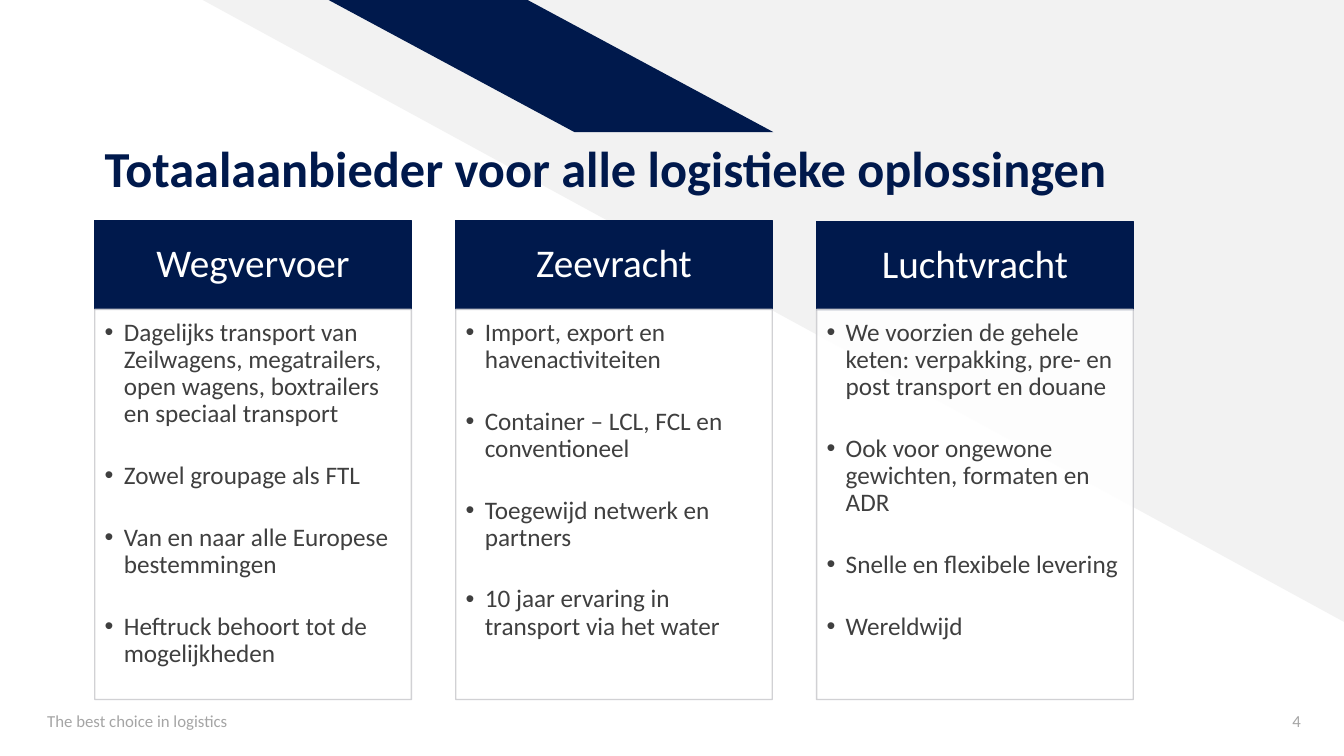
from dataclasses import dataclass

from lxml.etree import SubElement
from pptx import Presentation
from pptx.dml.color import RGBColor
from pptx.enum.shapes import MSO_SHAPE as Shape
from pptx.enum.text import MSO_ANCHOR as Anchor, PP_ALIGN as Align
from pptx.oxml.ns import qn
from pptx.util import Inches, Pt


@dataclass(frozen=True)
class Theme:
    font: str = "Calibri"
    navy: str = "00194C"
    pale: str = "F2F2F2"
    white: str = "FFFFFF"
    border: str = "CCCCD0"
    body: str = "3F3F3F"
    muted: str = "A5A5A5"
    title_size: int = 36
    heading_size: int = 28
    body_size: int = 18
    footer_size: int = 12


class SlideBuilder:
    def __init__(self, slide, theme):
        self.slide = slide
        self.theme = theme

    def shape(self, preset, box, fill, line=None, opacity=100, flips=()):
        shape = self.slide.shapes.add_shape(preset, *map(Inches, box))
        shape.shadow.inherit = False
        shape.fill.solid()
        shape.fill.fore_color.rgb = RGBColor.from_string(fill)
        if line:
            shape.line.color.rgb = RGBColor.from_string(line)
            shape.line.width = Pt(1)
        else:
            shape.line.fill.background()
        if opacity < 100:
            for color in shape.element.spPr.iter(qn("a:srgbClr")):
                SubElement(color, qn("a:alpha"), val=str(opacity * 1000))
        for flip in flips:
            shape.element.spPr.xfrm.set(flip, "1")
        return shape

    def text_box(self, box, text, size, color, **style):
        text_box = self.slide.shapes.add_textbox(*map(Inches, box))
        self.fill_text(text_box, [text], size, color, **style)

    def fill_text(self, shape, texts, size, color, bold=False,
                  align=Align.LEFT, anchor=Anchor.MIDDLE,
                  insets=(0.1, 0.05, 0.1, 0.05),
                  spacing=1.0, gap=0, bullets=False):
        frame = shape.text_frame
        frame.word_wrap = True
        frame.vertical_anchor = anchor
        (frame.margin_left, frame.margin_top,
         frame.margin_right, frame.margin_bottom) = map(Inches, insets)
        for index, text in enumerate(texts):
            paragraph = frame.add_paragraph() if index else frame.paragraphs[0]
            paragraph.alignment = align
            paragraph.line_spacing = spacing
            if index:
                paragraph.space_before = Pt(gap)
            if bullets:
                self.bullet(paragraph)
            run = paragraph.add_run()
            run.text = text
            run.font.name = self.theme.font
            run.font.size = Pt(size)
            run.font.bold = bold
            run.font.color.rgb = RGBColor.from_string(color)

    def bullet(self, paragraph):
        properties = paragraph._p.get_or_add_pPr()
        indent = Inches(0.19)
        properties.set("marL", str(indent))
        properties.set("indent", str(-indent))
        SubElement(properties, qn("a:buFont"), typeface="Arial")
        SubElement(properties, qn("a:buChar"), char="•")

    def service_column(self, left, heading_top, heading, points):
        theme = self.theme
        width, body_top = 3.14, 3.07
        header = self.shape(Shape.RECTANGLE, (left, heading_top, width, 0.88),
                            theme.navy, theme.navy)
        self.fill_text(header, [heading], theme.heading_size, theme.white,
                       align=Align.CENTER, spacing=0.9,
                       insets=(0.22, 0.12, 0.22, 0.12))
        panel = self.shape(Shape.RECTANGLE, (left, body_top, width, 3.87),
                           theme.white, theme.border, opacity=90)
        self.fill_text(panel, points, theme.body_size, theme.body,
                       anchor=Anchor.TOP, spacing=0.9, gap=24.6, bullets=True,
                       insets=(0.1, 0.1, 0.14, 0.16))


SERVICES = [
    (2.19, "Wegvervoer", [
        "Dagelijks transport van Zeilwagens, megatrailers, open wagens, "
        "boxtrailers en speciaal transport",
        "Zowel groupage als FTL",
        "Van en naar alle Europese bestemmingen",
        "Heftruck behoort tot de mogelijkheden",
    ]),
    (2.19, "Zeevracht", [
        "Import, export en havenactiviteiten",
        "Container – LCL, FCL en conventioneel",
        "Toegewijd netwerk en partners",
        "10 jaar ervaring in transport via het water",
    ]),
    (2.2, "Luchtvracht", [
        "We voorzien de gehele keten: verpakking, pre- en post transport "
        "en douane",
        "Ook voor ongewone gewichten, formaten en ADR",
        "Snelle en flexibele levering",
        "Wereldwijd",
    ]),
]


def main():
    deck = Presentation()
    deck.slide_width, deck.slide_height = Inches(13.33), Inches(7.5)
    theme = Theme()
    builder = SlideBuilder(deck.slides.add_slide(deck.slide_layouts[6]), theme)

    builder.shape(Shape.RIGHT_TRIANGLE, (2.01, 0, 11.32, 6.17), theme.pale,
                  flips=("flipH", "flipV"))
    stripe = builder.shape(Shape.PARALLELOGRAM, (3.26, 0, 4.41, 1.31),
                           theme.navy, flips=("flipH",))
    stripe.adjustments[0] = 1.86

    builder.text_box((0.94, 0.64, 11.83, 1.33),
                     "Totaalaanbieder voor alle logistieke oplossingen",
                     theme.title_size, theme.navy, bold=True, spacing=0.9,
                     anchor=Anchor.BOTTOM, insets=(0.1, 0.05, 0.1, 0))
    builder.text_box((0.37, 6.95, 4.5, 0.4), "The best choice in logistics",
                     theme.footer_size, theme.muted)
    builder.text_box((12.19, 6.95, 0.81, 0.4), "4",
                     theme.footer_size, theme.muted, align=Align.RIGHT)

    first_left, column_step = 0.94, 3.58
    for index, service in enumerate(SERVICES):
        builder.service_column(first_left + index * column_step, *service)

    deck.save("out.pptx")


if __name__ == "__main__":
    main()
